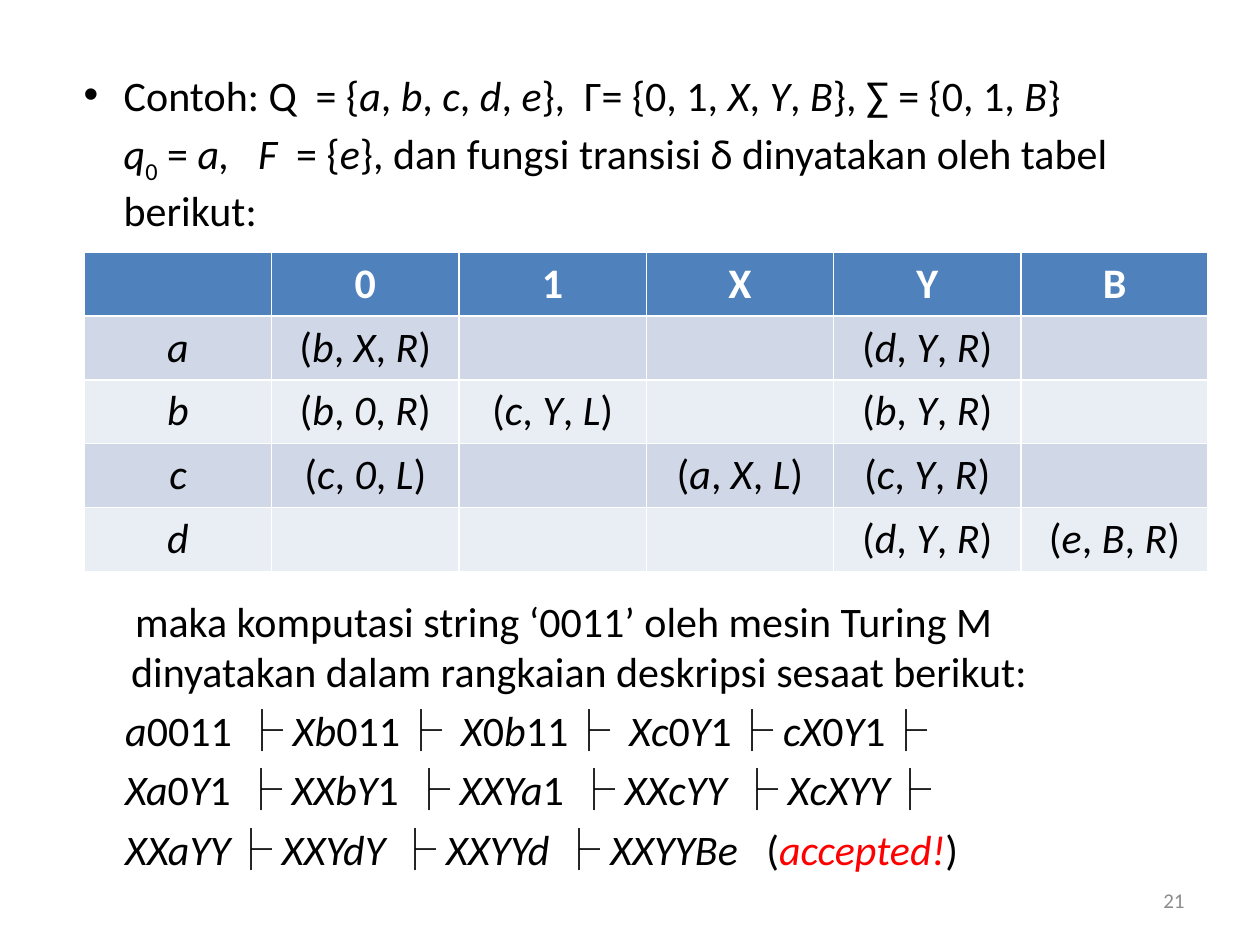
from itertools import groupby

from lxml.etree import SubElement as Sub
from pptx import Presentation
from pptx.dml.color import RGBColor as Rgb
from pptx.enum.text import MSO_ANCHOR as Anchor, MSO_AUTO_SIZE as Auto, PP_ALIGN as Align
from pptx.oxml.ns import qn
from pptx.util import Cm, Pt

BASE = {"name": "Calibri", "size": Pt(24), "bold": False}
HEAD = {**BASE, "bold": True}
SMALL = {**BASE, "size": Pt(12)}
CJK = "Noto Sans CJK SC"
WIDE = {"~": "540", "^": "1080"}
MARKS = {**WIDE, "├": CJK, "₀": "-25000"}

INTRO = [
    "Contoh: Q~= {_a_, _b_, _c_, _d_, _e_},~Γ= {0, 1, _X_, _Y_, _B_}, ∑ = {0, 1, _B_}",
    "_q_₀ = _a,^F_~= {_e_}, dan fungsi transisi δ dinyatakan oleh tabel berikut:",
]
LEAD = "maka komputasi string ‘0011’ oleh mesin Turing M dinyatakan dalam rangkaian deskripsi sesaat berikut:"
STEPS = [
    "_a_0011 ├ _Xb_011├~_X_0_b_11├~_Xc_0_Y_1├ _cX_0_Y_1├",
    "_Xa_0_Y_1 ├ _XXbY_1 ├ _XXYa_1 ├ _XXcYY_ ├ _XcXYY_├",
    "_XXaYY_├ _XXYdY _├ _XXYYd _├ _XXYYBe_^(_accepted!_)",
]
COLS = ["", "0", "1", "X", "Y", "B"]
RULES = {
    "a": ["bXR", "", "", "dYR", ""],
    "b": ["b0R", "cYL", "", "bYR", ""],
    "c": ["c0L", "", "aXL", "cYR", ""],
    "d": ["", "", "", "dYR", "eBR"],
}


def hue(code):
    return Rgb.from_string(code)


def style(obj, vals):
    for key, val in vals.items():
        setattr(obj, key, val)


def mark(run, sign):
    props = run._r.get_or_add_rPr()
    if sign in WIDE:
        run.text = " "
        props.set("spc", WIDE[sign])
    elif sign == "₀":
        run.text = "0"
        props.set("baseline", MARKS[sign])
    elif sign == "├":
        run.font.name = CJK
        Sub(props, qn("a:ea")).set("typeface", CJK)


def write(para, text, look=BASE, ink="000000"):
    for num, part in enumerate(text.split("_")):
        for sign, chars in groupby(part, lambda c: c if c in MARKS else ""):
            run = para.add_run()
            run.text = "".join(chars)
            style(run.font, {**look, "italic": num % 2 == 1})
            run.font.color.rgb = hue("FF0000" if run.text == "accepted!" else ink)
            mark(run, sign)


def indent(para, left, first, dot=False):
    props = para._p.get_or_add_pPr()
    props.set("marL", str(Cm(left)))
    props.set("indent", str(Cm(first)))
    if dot:
        Sub(props, qn("a:buFont")).set("typeface", "Arial")
        Sub(props, qn("a:buChar")).set("char", "•")
    else:
        Sub(props, qn("a:buNone"))


def body(slide, x, y, w, h):
    slide.shapes.title.element.getparent().remove(slide.shapes.title.element)
    box = slide.placeholders[1]
    style(box, {"left": Cm(x), "top": Cm(y), "width": Cm(w), "height": Cm(h)})
    frame = box.text_frame
    style(frame, {"word_wrap": True, "auto_size": Auto.NONE})
    rows = [
        (INTRO[0], 0.97, -0.81, {"level": 1}),
        (INTRO[1], 0.97, 0, {}),
        (LEAD, 1.12, 0.08, {"space_before": Pt(205.6)}),
    ]
    rows += [(step, 1.12, -0.12, {"line_spacing": Pt(29.3)}) for step in STEPS]
    for num, (text, left, first, vals) in enumerate(rows):
        para = frame.add_paragraph() if num else frame.paragraphs[0]
        style(para, {"space_before": Pt(4.5), **vals})
        indent(para, left, first, num == 0)
        write(para, text)


def grid(slide, x, y, w, h):
    rows = [COLS]
    for state, moves in RULES.items():
        cells = ["(" + ", ".join(f"_{c}_" for c in move) + ")" if move else "" for move in moves]
        rows.append([f"_{state}_"] + cells)
    table = slide.shapes.add_table(len(rows), len(COLS), Cm(x), Cm(y), Cm(w), Cm(h)).table
    for r, row in enumerate(rows):
        fill = ("D0D8E8" if r % 2 else "E9EDF4") if r else "4F81BD"
        look, ink = (BASE, "000000") if r else (HEAD, "FFFFFF")
        for c, text in enumerate(row):
            cell = table.cell(r, c)
            cell.fill.solid()
            cell.fill.fore_color.rgb = hue(fill)
            if text:
                para = cell.text_frame.paragraphs[0]
                para.alignment = Align.CENTER
                write(para, text, look, ink)


def number(slide, x, y, w, h):
    frame = slide.shapes.add_textbox(Cm(x), Cm(y), Cm(w), Cm(h)).text_frame
    style(frame, {"word_wrap": True, "vertical_anchor": Anchor.MIDDLE})
    para = frame.paragraphs[0]
    para.alignment = Align.RIGHT
    write(para, "21", SMALL, "8C8C8C")


def main():
    deck = Presentation()
    style(deck, {"slide_width": Cm(25.4), "slide_height": Cm(19.05)})
    slide = deck.slides.add_slide(deck.slide_layouts[1])
    body(slide, 1.27, 1.27, 22.86, 16.71)
    grid(slide, 1.7, 5.08, 22.66, 6.4)
    number(slide, 18.2, 17.65, 5.93, 1.01)
    deck.save("out.pptx")


if __name__ == "__main__":
    main()
